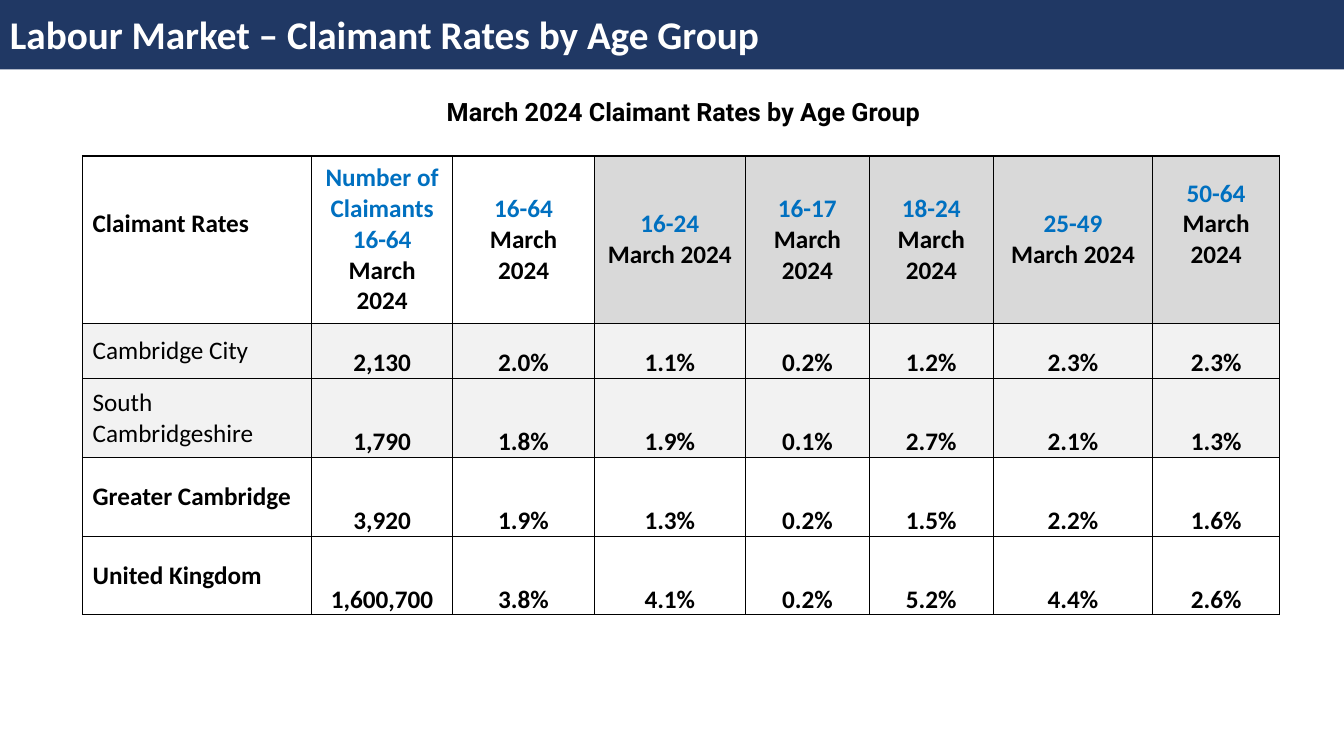
"""Build the slide on claimant rates by age group."""
from dataclasses import dataclass

from lxml.etree import SubElement
from pptx import Presentation
from pptx.dml.color import RGBColor
from pptx.enum.shapes import MSO_SHAPE
from pptx.enum.text import MSO_ANCHOR, PP_ALIGN
from pptx.oxml.ns import qn
from pptx.slide import Slide
from pptx.table import _Cell
from pptx.text.text import TextFrame
from pptx.util import Pt

NAVY = RGBColor(0x20, 0x38, 0x64)
BLUE = RGBColor(0x00, 0x70, 0xC0)
BLACK = RGBColor(0x00, 0x00, 0x00)
WHITE = RGBColor(0xFF, 0xFF, 0xFF)
LIGHT_GREY = RGBColor(0xF2, 0xF2, 0xF2)
MID_GREY = RGBColor(0xD9, 0xD9, 0xD9)

SLIDE_WIDTH = 960
SLIDE_HEIGHT = 540
TABLE_LEFT = 59
TABLE_TOP = 111.5
HEADER_HEIGHT = 119.5
SIDE_MARGIN = 7.2
EDGE_MARGIN = 3.6
RAISED_MARGIN = 25.6
PERIOD = "March 2024"


@dataclass(frozen=True)
class Column:
    heading: str
    width: float
    fill: RGBColor
    bottom_margin: float = EDGE_MARGIN


@dataclass(frozen=True)
class Area:
    name: str
    values: tuple[str, ...]
    height: float = 56.25
    fill: RGBColor = WHITE
    bold: bool = True


NAME_COLUMN = Column("Claimant Rates", 163.5, WHITE, RAISED_MARGIN)
AGE_COLUMNS = (
    Column("Number of Claimants 16-64", 101, WHITE),
    Column("16-64", 101, WHITE),
    Column("16-24", 108, MID_GREY),
    Column("16-17", 88.5, MID_GREY),
    Column("18-24", 88.5, MID_GREY),
    Column("25-49", 114, MID_GREY),
    Column("50-64", 90.5, MID_GREY, RAISED_MARGIN),
)
COLUMNS = (NAME_COLUMN, *AGE_COLUMNS)
AREAS = (
    Area("Cambridge City", ("2,130", "2.0%", "1.1%", "0.2%", "1.2%", "2.3%", "2.3%"),
         39.5, LIGHT_GREY, False),
    Area("South Cambridgeshire", ("1,790", "1.8%", "1.9%", "0.1%", "2.7%", "2.1%", "1.3%"),
         fill=LIGHT_GREY, bold=False),
    Area("Greater Cambridge", ("3,920", "1.9%", "1.3%", "0.2%", "1.5%", "2.2%", "1.6%")),
    Area("United Kingdom", ("1,600,700", "3.8%", "4.1%", "0.2%", "5.2%", "4.4%", "2.6%")),
)


def write(frame: TextFrame, text: str, *, size: float = 18, font: str = "Calibri",
          color: RGBColor = BLACK, bold: bool = True,
          align: PP_ALIGN = PP_ALIGN.CENTER) -> None:
    """Write one formatted paragraph, reusing the first while it is empty."""
    paragraph = frame.add_paragraph() if frame.text else frame.paragraphs[0]
    paragraph.alignment = align
    run = paragraph.add_run()
    run.text = text
    run.font.name = font
    run.font.size = Pt(size)
    run.font.bold = bold
    run.font.color.rgb = color


def style_cell(cell: _Cell, fill: RGBColor, *, anchor: MSO_ANCHOR = MSO_ANCHOR.MIDDLE,
               side: float = SIDE_MARGIN, top: float = EDGE_MARGIN,
               bottom: float = EDGE_MARGIN) -> None:
    """Set the borders, fill, anchor and margins of a cell."""
    properties = cell._tc.get_or_add_tcPr()
    for edge in ("a:lnL", "a:lnR", "a:lnT", "a:lnB"):
        line = SubElement(properties, qn(edge), w=str(Pt(1)))
        solid = SubElement(line, qn("a:solidFill"))
        SubElement(solid, qn("a:srgbClr"), val=str(BLACK))
    cell.fill.solid()
    cell.fill.fore_color.rgb = fill
    cell.vertical_anchor = anchor
    cell.margin_left = cell.margin_right = Pt(side)
    cell.margin_top = Pt(top)
    cell.margin_bottom = Pt(bottom)


def add_title_bar(slide: Slide) -> None:
    """Add the navy bar with the slide title."""
    bar = slide.shapes.add_shape(MSO_SHAPE.RECTANGLE, Pt(0), Pt(-1.5), Pt(SLIDE_WIDTH), Pt(51))
    bar.shadow.inherit = False
    bar.fill.solid()
    bar.fill.fore_color.rgb = NAVY
    bar.line.fill.background()
    bar.text_frame.vertical_anchor = MSO_ANCHOR.MIDDLE
    write(bar.text_frame, "Labour Market – Claimant Rates by Age Group",
          size=28, color=WHITE, align=PP_ALIGN.LEFT)


def add_table_caption(slide: Slide) -> None:
    """Add the caption above the table."""
    caption = slide.shapes.add_textbox(Pt(156), Pt(65.5), Pt(664.5), Pt(29))
    caption.text_frame.word_wrap = True
    write(caption.text_frame, "March 2024 Claimant Rates by Age Group", font="Roboto")


def add_claimant_table(slide: Slide) -> None:
    """Add the table of claimant rates."""
    heights = (HEADER_HEIGHT, *(area.height for area in AREAS))
    table = slide.shapes.add_table(
        len(heights), len(COLUMNS), Pt(TABLE_LEFT), Pt(TABLE_TOP),
        Pt(sum(column.width for column in COLUMNS)), Pt(sum(heights))).table
    table.first_row = table.horz_banding = False
    for row, height in zip(table.rows, heights):
        row.height = Pt(height)

    for index, column in enumerate(COLUMNS):
        table.columns[index].width = Pt(column.width)
        cell = table.cell(0, index)
        style_cell(cell, column.fill, bottom=column.bottom_margin)
        if column is NAME_COLUMN:
            write(cell.text_frame, column.heading, align=PP_ALIGN.LEFT)
        else:
            write(cell.text_frame, column.heading, color=BLUE)
            write(cell.text_frame, PERIOD)

    for row_index, area in enumerate(AREAS, start=1):
        name_cell = table.cell(row_index, 0)
        style_cell(name_cell, area.fill)
        write(name_cell.text_frame, area.name, bold=area.bold, align=PP_ALIGN.LEFT)
        for column_index, value in enumerate(area.values, start=1):
            cell = table.cell(row_index, column_index)
            style_cell(cell, area.fill, anchor=MSO_ANCHOR.BOTTOM, side=0, top=0, bottom=0)
            write(cell.text_frame, value)


def main() -> None:
    """Create and save the presentation."""
    presentation = Presentation()
    presentation.slide_width = Pt(SLIDE_WIDTH)
    presentation.slide_height = Pt(SLIDE_HEIGHT)
    slide = presentation.slides.add_slide(presentation.slide_layouts[6])
    add_title_bar(slide)
    add_table_caption(slide)
    add_claimant_table(slide)
    presentation.save("out.pptx")


if __name__ == "__main__":
    main()
